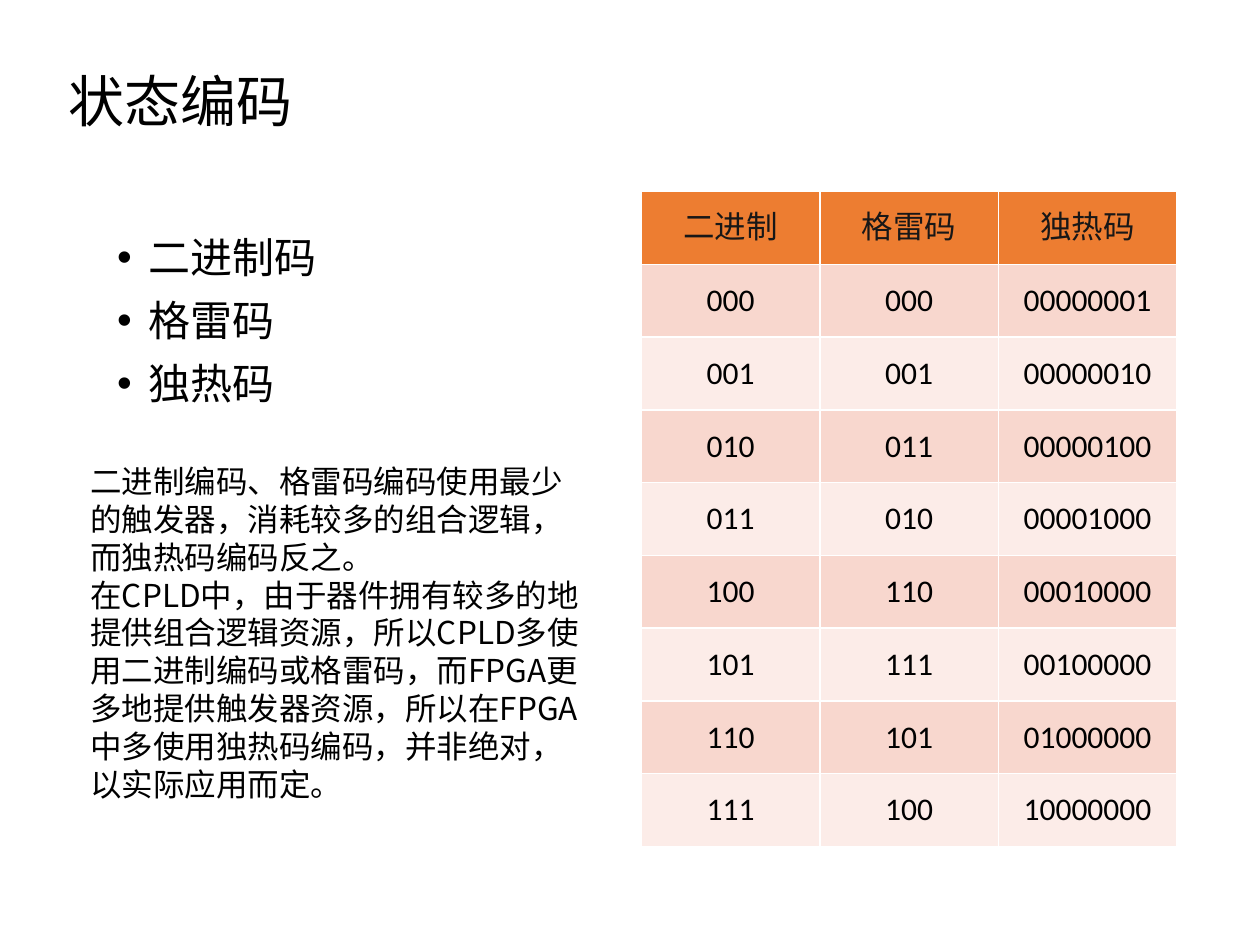
from lxml import etree
from pptx import Presentation
from pptx import util as u
from pptx.dml import color
from pptx.enum import text
from pptx.oxml import ns

COLORS = {"text": "000000", "header_text": "181717", "header": "ED7D31",
          "dark_band": "F8D7CE", "light_band": "FCECE8"}
LATIN, CJK = "Calibri", "Noto Sans CJK SC"

TITLE = "状态编码"
CODES = ["二进制码", "格雷码", "独热码"]
NOTES = [
    "二进制编码、格雷码编码使用最少的触发器，消耗较多的组合逻辑，而独热码编码反之。",
    "在CPLD中，由于器件拥有较多的地提供组合逻辑资源，所以CPLD多使用二进制编码或格雷码，"
    "而FPGA更多地提供触发器资源，所以在FPGA中多使用独热码编码，并非绝对，以实际应用而定。",
]
HEADER = ["二进制", "格雷码", "独热码"]


def rgb(name):
    """Return the named palette colour."""
    return color.RGBColor.from_string(COLORS[name])


def box(left, top, width, height):
    """Return a box given in inches as lengths."""
    return [u.Inches(v) for v in (left, top, width, height)]


def place(sp, area):
    """Move a shape into the given box."""
    sp.left, sp.top, sp.width, sp.height = area


def add_run(p, words, size, font, fill="text"):
    """Add a formatted run to a paragraph."""
    r = p.add_run()
    r.text = words
    r.font.size, r.font.name, r.font.bold = u.Pt(size), font, False
    r.font.color.rgb = rgb(fill)
    ea = etree.SubElement(r.font._element, ns.qn("a:ea"))
    ea.set("typeface", font)


def paragraphs(tf, lines):
    """Yield a paragraph of the frame with each line of text."""
    for i, line in enumerate(lines):
        yield (tf.add_paragraph() if i else tf.paragraphs[0]), line


def fill_title(sp, area):
    """Write the slide title."""
    place(sp, area)
    tf = sp.text_frame
    tf.auto_size = text.MSO_AUTO_SIZE.NONE
    tf.vertical_anchor = text.MSO_ANCHOR.MIDDLE
    p = tf.paragraphs[0]
    p.alignment, p.line_spacing = text.PP_ALIGN.LEFT, 0.9
    add_run(p, TITLE, 32, LATIN)


def fill_codes(sp, area):
    """Write the bulleted list of encodings."""
    place(sp, area)
    tf = sp.text_frame
    tf.auto_size = text.MSO_AUTO_SIZE.NONE
    for p, line in paragraphs(tf, CODES):
        pPr = p._p.get_or_add_pPr()
        pPr.set("marL", str(u.Inches(0.25)))
        pPr.set("indent", str(-u.Inches(0.25)))
        etree.SubElement(pPr, ns.qn("a:buChar")).set("char", "•")
        p.line_spacing = u.Pt(26)
        p.space_before = u.Pt(10 if line != CODES[0] else 0)
        add_run(p, line, 24, CJK)


def add_notes(s, area):
    """Add the paragraphs comparing the encodings."""
    tf = s.shapes.add_textbox(*area).text_frame
    tf.word_wrap = True
    for p, line in paragraphs(tf, NOTES):
        p.line_spacing = u.Pt(21.6)
        add_run(p, line, 18, CJK)


def add_code_table(s, area):
    """Add the table of three-bit states in each encoding."""
    rows = [HEADER] + [[f"{n:03b}", f"{n ^ n >> 1:03b}", f"{1 << n:08b}"]
                       for n in range(8)]
    table = s.shapes.add_table(len(rows), len(HEADER), *area).table
    for i, row in enumerate(rows):
        band = "dark_band" if i % 2 else "light_band"
        for j, words in enumerate(row):
            cell = table.cell(i, j)
            cell.fill.solid()
            cell.fill.fore_color.rgb = rgb(band if i else "header")
            cell.vertical_anchor = text.MSO_ANCHOR.MIDDLE
            p = cell.text_frame.paragraphs[0]
            p.alignment = text.PP_ALIGN.CENTER
            add_run(p, words, 18, LATIN, "text" if i else "header_text")


def main():
    """Build and save the slide."""
    prs = Presentation()
    prs.slide_width, prs.slide_height = u.Inches(10), u.Inches(7.5)
    s = prs.slides.add_slide(prs.slide_layouts[1])
    fill_title(s.shapes.title, box(0.44, 0.4, 8.62, 0.85))
    fill_codes(s.placeholders[1], box(0.83, 1.83, 3.68, 1.68))
    add_code_table(s, box(5.09, 1.52, 4.25, 5.2))
    add_notes(s, box(0.62, 3.62, 4.14, 2.83))
    prs.save("out.pptx")


if __name__ == "__main__":
    main()
